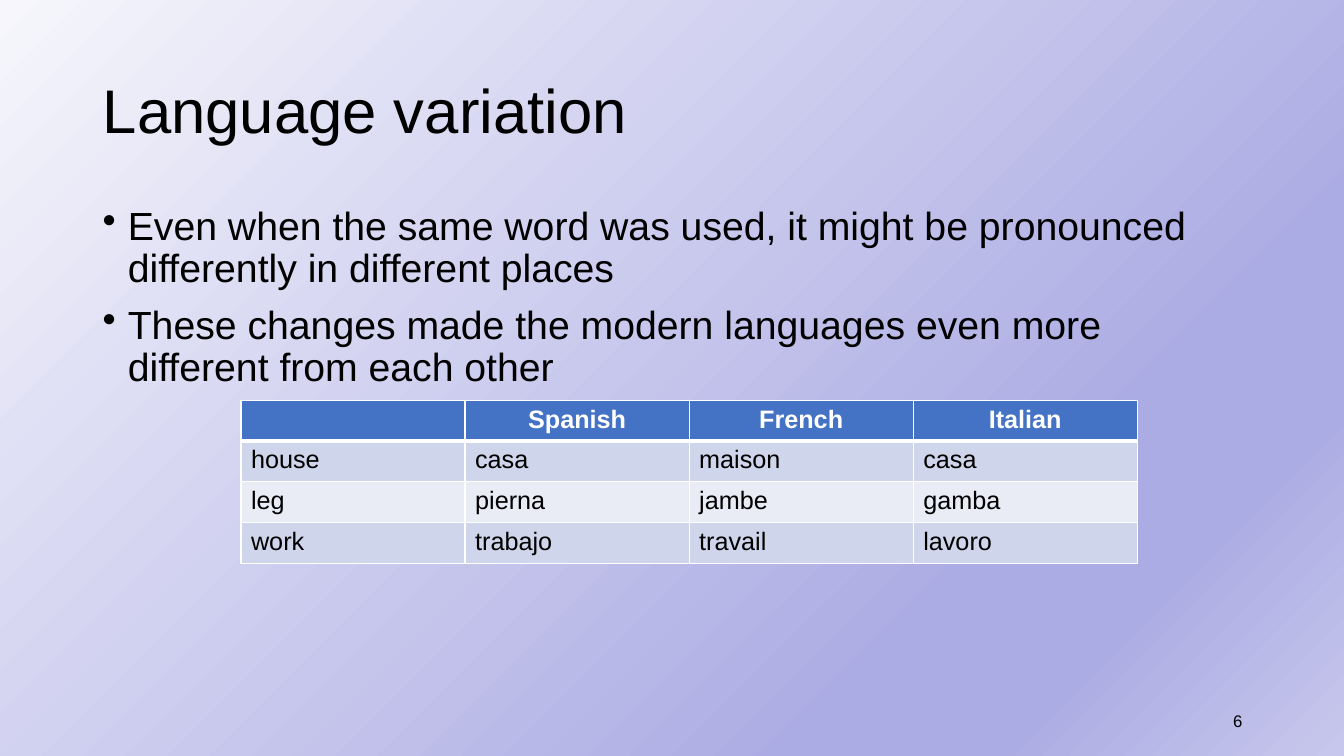
from pptx import Presentation
from pptx.dml.color import RGBColor
from pptx.enum.text import MSO_ANCHOR as Anchor, PP_ALIGN as Align
from pptx.oxml.ns import qn
from pptx.util import Inches, Pt
from lxml.etree import SubElement as Sub

BLACK = RGBColor(0x00, 0x00, 0x00)
WHITE = RGBColor(0xFF, 0xFF, 0xFF)
BLUE = RGBColor(0x44, 0x72, 0xC4)
DARK = RGBColor(0xCF, 0xD5, 0xEA)
LIGHT = RGBColor(0xE9, 0xEB, 0xF5)
STOPS = [
    (0, RGBColor(0xF6, 0xF6, 0xFC)),
    (74, RGBColor(0xAC, 0xAC, 0xE4)),
    (83, RGBColor(0xAC, 0xAC, 0xE4)),
    (100, RGBColor(0xC7, 0xC7, 0xED)),
]
POINTS = [
    "Even when the same word was used, it might be pronounced differently in different places",
    "These changes made the modern languages even more different from each other",
]
WORDS = [
    ["", "Spanish", "French", "Italian"],
    ["house", "casa", "maison", "casa"],
    ["leg", "pierna", "jambe", "gamba"],
    ["work", "trabajo", "travail", "lavoro"],
]


def style(para, size, color=BLACK, align=Align.LEFT, bold=False):
    para.alignment = align
    font = para.font
    font.name = "Arial"
    font.size = Pt(size)
    font.bold = bold
    font.color.rgb = color


def border(cell, side, width):
    line = Sub(cell._tc.get_or_add_tcPr(), qn(f"a:ln{side}"), w=str(Pt(width)))
    Sub(Sub(line, qn("a:solidFill")), qn("a:srgbClr"), val=str(WHITE))


prs = Presentation()
prs.slide_width = Inches(13.33)
prs.slide_height = Inches(7.5)
slide = prs.slides.add_slide(prs.slide_layouts[5])

fill = slide.background.fill
fill.gradient()
fill.gradient_angle = 315
ramp = slide._element.find(".//" + qn("a:gsLst"))
ramp.clear()
for pos, color in STOPS:
    stop = Sub(ramp, qn("a:gs"), pos=str(pos * 1000))
    Sub(stop, qn("a:srgbClr"), val=str(color))

title = slide.shapes.title
title.left, title.top = Inches(0.92), Inches(0.4)
title.width, title.height = Inches(11.5), Inches(1.45)
title.text = "Language variation"
title.text_frame.vertical_anchor = Anchor.MIDDLE
head = title.text_frame.paragraphs[0]
head.line_spacing = 0.9
style(head, 44)

body = slide.shapes.add_textbox(Inches(0.92), Inches(2), Inches(11.5), Inches(1.97))
frame = body.text_frame
frame.word_wrap = True
frame.text = "\n".join(POINTS)
for para in frame.paragraphs:
    style(para, 28)
    para.line_spacing = 0.9
    para.space_before = Pt(10)
    props = para._p.get_or_add_pPr()
    props.set("marL", str(Inches(0.25)))
    props.set("indent", str(Inches(-0.25)))
    bullet = props.makeelement(qn("a:buChar"), {"char": "•"})
    props.insert_element_before(bullet, "a:tabLst", "a:defRPr", "a:extLst")

number = slide.shapes.add_textbox(Inches(9.42), Inches(6.95), Inches(3), Inches(0.4))
number.text_frame.word_wrap = True
number.text_frame.vertical_anchor = Anchor.MIDDLE
number.text_frame.text = "6"
style(number.text_frame.paragraphs[0], 12, align=Align.RIGHT)

table = slide.shapes.add_table(
    4, 4, Inches(2.39), Inches(3.97), Inches(8.89), Inches(1.62)
).table
for r, row in enumerate(WORDS):
    for c, word in enumerate(row):
        cell = table.cell(r, c)
        cell.text = word
        para = cell.text_frame.paragraphs[0]
        if r == 0:
            style(para, 18, WHITE, Align.CENTER, True)
        else:
            style(para, 18)
        for side in "LRTB":
            thick = (r, side) in [(0, "B"), (1, "T")]
            border(cell, side, 3 if thick else 1)
        cell.fill.solid()
        cell.fill.fore_color.rgb = BLUE if r == 0 else DARK if r % 2 else LIGHT

prs.save("out.pptx")
